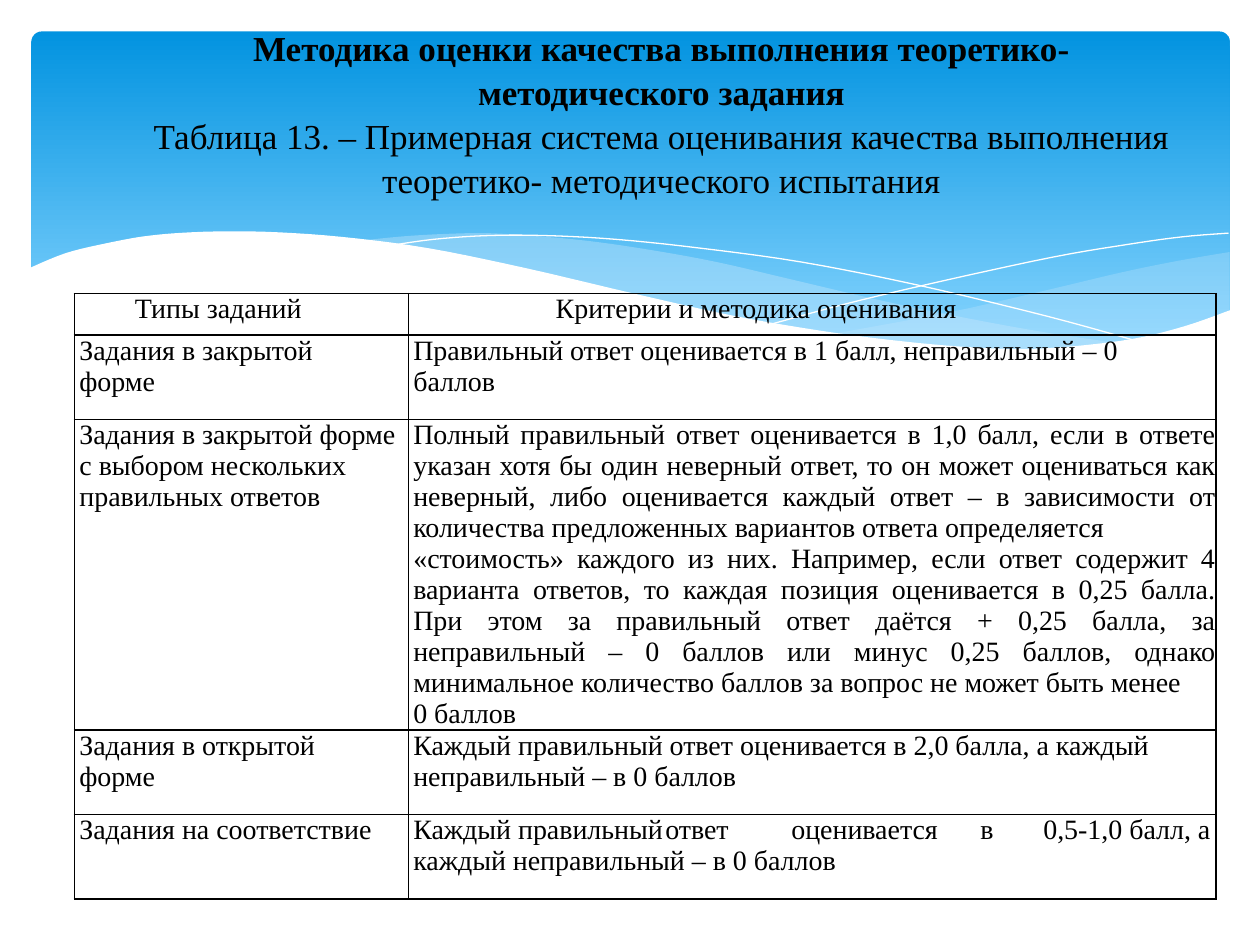
import pptx
import pptx.util
import pptx.dml.color
import pptx.enum.text
import pptx.oxml.ns
from lxml import etree

Inches, Pt = pptx.util.Inches, pptx.util.Pt
RGB = pptx.dml.color.RGBColor
Align = pptx.enum.text.PP_ALIGN
qn = pptx.oxml.ns.qn

BLACK = RGB(0, 0, 0)
WHITE = RGB(255, 255, 255)
DEEP = RGB(0x02, 0x93, 0xE0)
SKY = RGB(0x83, 0xD3, 0xFE)
PALE = RGB(0xC6, 0xE7, 0xFC)
FONT = "Times New Roman"

TITLE = [
    ("Методика оценки качества выполнения теоретико-методического задания", True),
    ("Таблица 13. – Примерная система оценивания качества выполнения "
     "теоретико- методического испытания", False),
]

# Each cell is a list of paragraphs
HEADS = [["Типы заданий"], ["Критерии и методика оценивания"]]
ROWS = [
    [["Задания в закрытой", "форме"],
     ["Правильный ответ оценивается в 1 балл, неправильный – 0", "баллов"]],
    [["Задания в закрытой форме с выбором нескольких правильных ответов"],
     ["Полный правильный ответ оценивается в 1,0 балл, если в ответе указан "
      "хотя бы один неверный ответ, то он может оцениваться как неверный, либо "
      "оценивается каждый ответ – в зависимости от количества предложенных "
      "вариантов ответа определяется",
      "«стоимость» каждого из них. Например, если ответ содержит 4 варианта "
      "ответов, то каждая позиция оценивается в 0,25 балла. При этом за "
      "правильный ответ даётся + 0,25 балла, за неправильный – 0 баллов или "
      "минус 0,25 баллов, однако минимальное количество баллов за вопрос не "
      "может быть менее",
      "0 баллов"]],
    [["Задания в открытой", "форме"],
     ["Каждый правильный ответ оценивается в 2,0 балла, а каждый",
      "неправильный – в 0 баллов"]],
    [["Задания на соответствие"],
     ["Каждый правильный\tответ\tоценивается\tв\t0,5-1,0 балл, "
      "а каждый неправильный – в 0 баллов"]],
]
WIDTHS = [2.65, 6.41]
HEIGHTS = [0.33, 0.67, 1.92, 0.67, 0.67]
HEAD_GAPS = [0.48, 1.17]
GAP = 0.04
TABS = [1.75, 2.28, 3.31, 3.53, 4.15]
LONG_ROW = 2

# Waves: curves joined end to end, fill colour, opacity in percent
WAVES = [
    ([[(9.76, 2), (9.35, 2.07), (8.91, 2.16), (8.32, 2.3), (7.53, 2.48), (6.61, 2.65)],
      [(6.61, 2.65), (7.19, 2.72), (7.69, 2.77), (8.14, 2.78), (8.54, 2.76),
       (8.97, 2.7), (9.35, 2.62), (9.76, 2.47)]], PALE, 29),
    ([[(8.93, 2.73), (8.37, 2.65), (7.75, 2.54), (7.06, 2.4), (6.29, 2.22),
       (5.69, 2.08), (5.14, 1.98), (4.65, 1.91), (4.2, 1.87), (3.8, 1.85),
       (3.28, 1.87), (2.86, 1.91)],
      [(2.86, 1.91), (3.42, 1.99), (4.04, 2.11), (4.91, 2.32), (5.66, 2.48),
       (6.34, 2.61), (6.95, 2.7), (7.48, 2.76), (7.96, 2.78), (8.48, 2.77),
       (8.93, 2.73)]], PALE, 40),
    ([[(3.09, 1.95), (3.44, 1.9), (3.87, 1.87), (4.33, 1.87), (4.89, 1.9),
       (5.56, 1.97), (6.36, 2.08), (7.27, 2.26), (8.31, 2.51), (9.07, 2.72)]], None, 100),
    ([[(6.13, 2.57), (6.72, 2.41), (7.48, 2.23), (8.36, 2.04), (8.95, 1.94),
       (9.38, 1.88), (9.75, 1.85)]], None, 100),
    ([[(9.77, 2.46), (9.4, 2.59), (8.99, 2.69), (8.5, 2.75), (8.09, 2.77),
       (7.61, 2.75), (7.08, 2.7), (6.48, 2.62), (5.79, 2.5), (5.03, 2.33),
       (4.18, 2.13), (3.4, 1.97), (2.71, 1.88), (2.11, 1.84), (1.61, 1.84),
       (1.19, 1.87), (0.85, 1.93), (0.52, 2.01), (0.23, 2.13)],
      [(0.23, 3.29)], [(9.77, 3.29)]], WHITE, 100),
]


def smooth(knots, steps=5):
    """Points of a Catmull-Rom curve through the knots."""
    ext = [knots[0], *knots, knots[-1]]
    out = [knots[0]]
    for a, b, c, d in zip(ext, ext[1:], ext[2:], ext[3:]):
        for i in range(1, steps + 1):
            t = i / steps
            out.append(tuple(
                (2 * q + (r - p) * t + (2 * p - 5 * q + 4 * r - s) * t ** 2
                 + (3 * q - p - 3 * r + s) * t ** 3) / 2
                for p, q, r, s in zip(a, b, c, d)))
    return out


def add_wave(shapes, curves, color, alpha):
    dots = [(Inches(x), Inches(y)) for knots in curves for x, y in smooth(knots)]
    pen = shapes.build_freeform(*dots[0])
    pen.add_line_segments(dots[1:], close=color is not None)
    wave = pen.convert_to_shape()
    wave.shadow.inherit = False
    if color is None:
        wave.fill.background()
        wave.line.color.rgb = WHITE
        wave.line.width = Pt(0)
        return
    wave.line.fill.background()
    wave.fill.solid()
    wave.fill.fore_color.rgb = color
    if alpha < 100:
        node = wave.element.spPr.find(qn("a:solidFill")).find(qn("a:srgbClr"))
        etree.SubElement(node, qn("a:alpha"), val=str(alpha * 1000))


def add_panel(shapes):
    panel = shapes.add_shape(pptx.enum.shapes.MSO_SHAPE.ROUNDED_RECTANGLE,
                             Inches(0.25), Inches(0.25), Inches(9.51), Inches(2.7))
    panel.adjustments[0] = 0.03
    panel.shadow.inherit = False
    panel.line.fill.background()
    panel.fill.gradient()
    panel.fill.gradient_angle = 270
    for stop, color, place in zip(panel.fill.gradient_stops, (DEEP, SKY), (0, 0.9)):
        stop.color.rgb = color
        stop.position = place


def add_run(para, text, size, bold=False):
    run = para.add_run()
    run.text = text
    font = run.font
    font.name, font.size, font.bold = FONT, Pt(size), bold
    font.color.rgb = BLACK


def indent(para, left):
    props = para._p.get_or_add_pPr()
    props.set("marL", str(Inches(left)))
    props.set("indent", "0")
    return props


def add_border(cell):
    props = cell._tc.get_or_add_tcPr()
    for i, side in enumerate(("lnL", "lnR", "lnT", "lnB")):
        line = etree.Element(qn("a:" + side), w=str(Pt(1)))
        fill = etree.SubElement(line, qn("a:solidFill"))
        etree.SubElement(fill, qn("a:srgbClr"), val=str(BLACK))
        props.insert(i, line)


def fill_cell(cell, paras, gap, align):
    cell.margin_left = cell.margin_right = cell.margin_top = cell.margin_bottom = 0
    cell.fill.background()
    add_border(cell)
    frame = cell.text_frame
    for i, text in enumerate(paras):
        para = frame.add_paragraph() if i else frame.paragraphs[0]
        para.alignment = align
        para.line_spacing = Pt(17.75)
        props = indent(para, gap)
        if "\t" in text:
            stops = etree.SubElement(props, qn("a:tabLst"))
            for x in TABS:
                etree.SubElement(stops, qn("a:tab"), pos=str(Inches(x)), algn="l")
        add_run(para, text, 16)


def add_grid(shapes):
    grid = shapes.add_table(len(HEIGHTS), len(WIDTHS), Inches(0.59), Inches(2.33),
                            Inches(sum(WIDTHS)), Inches(sum(HEIGHTS))).table
    grid.first_row = grid.horz_banding = False
    for col, wide in zip(grid.columns, WIDTHS):
        col.width = Inches(wide)
    for r, cells in enumerate([HEADS, *ROWS]):
        grid.rows[r].height = Inches(HEIGHTS[r])
        for c, paras in enumerate(cells):
            gap = GAP if r else HEAD_GAPS[c]
            just = r == LONG_ROW and c == 1
            fill_cell(grid.cell(r, c), paras, gap, Align.JUSTIFY if just else Align.LEFT)


def set_title(title):
    title.left, title.top = Inches(0.5), Inches(0.37)
    title.width, title.height = Inches(9), Inches(1.37)
    frame = title.text_frame
    frame.word_wrap = True
    frame.auto_size = pptx.enum.text.MSO_AUTO_SIZE.NONE
    frame.vertical_anchor = pptx.enum.text.MSO_ANCHOR.MIDDLE
    frame.margin_bottom = Inches(0.38)
    para = frame.paragraphs[0]
    para.alignment = Align.CENTER
    para.line_spacing = 1.05
    indent(para, 0.5)
    for i, (text, bold) in enumerate(TITLE):
        if i:
            para.add_line_break()
        add_run(para, text, 20, bold)


def main():
    deck = pptx.Presentation()
    deck.slide_width, deck.slide_height = Inches(10), Inches(7.5)
    shapes = deck.slides.add_slide(deck.slide_layouts[5]).shapes
    add_panel(shapes)
    for wave in WAVES:
        add_wave(shapes, *wave)
    add_grid(shapes)
    set_title(shapes.title)
    shapes.element.append(shapes.title.element)  # bring to front
    deck.save("out.pptx")


if __name__ == "__main__":
    main()
